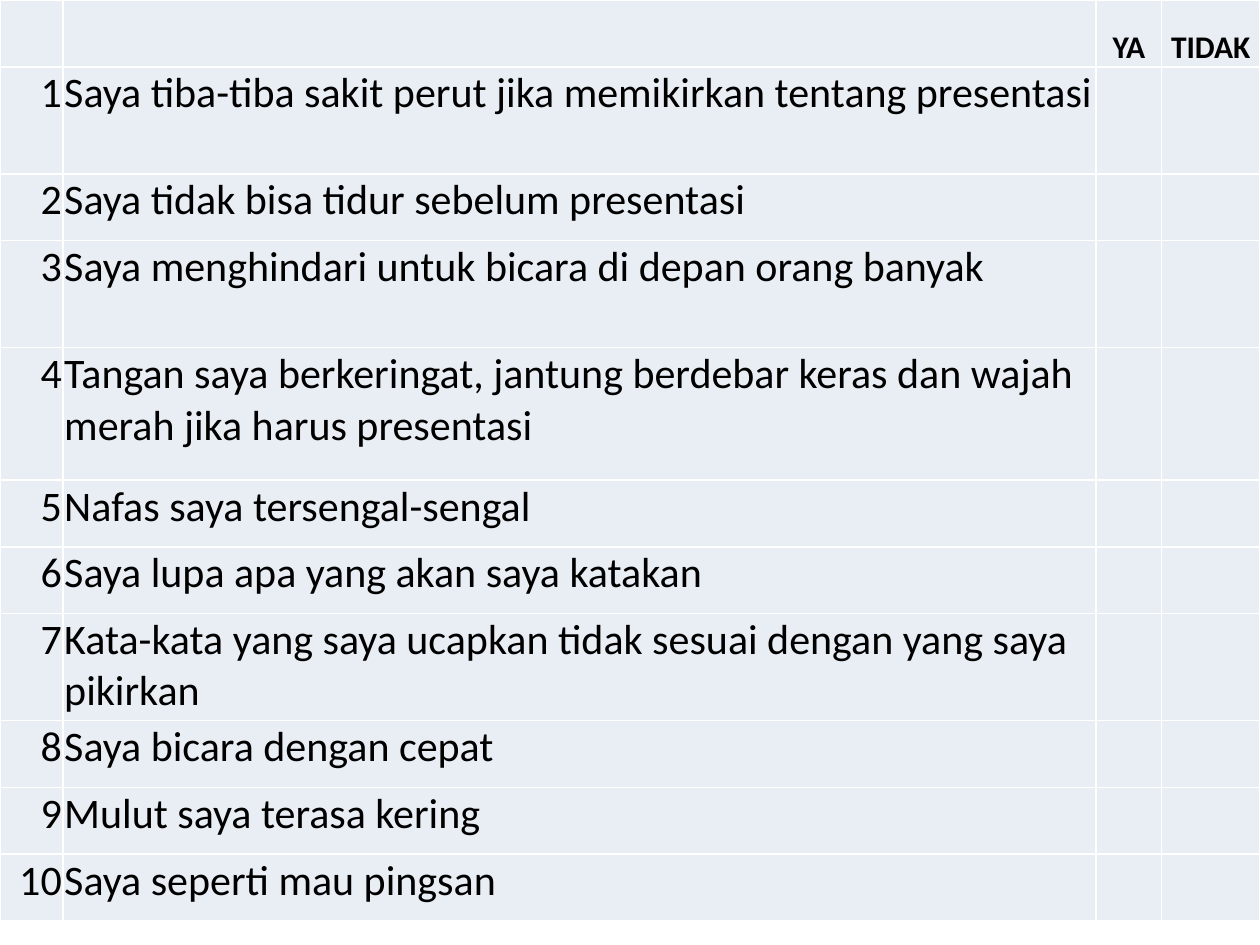
"""Build a slide with a yes/no checklist about presentation nerves."""
from pptx import Presentation
from pptx.dml.color import RGBColor
from pptx.enum.text import MSO_ANCHOR, PP_ALIGN
from pptx.oxml import parse_xml
from pptx.oxml.ns import nsdecls
from pptx.util import Inches, Pt

LEFT, MID, RIGHT = PP_ALIGN.LEFT, PP_ALIGN.CENTER, PP_ALIGN.RIGHT
TOP, BOTTOM = MSO_ANCHOR.TOP, MSO_ANCHOR.BOTTOM

HEADS = ["", "", "YA", "TIDAK"]
ITEMS = [
    ("Saya tiba-tiba sakit perut jika memikirkan tentang presentasi", "mid"),
    ("Saya tidak bisa tidur sebelum presentasi", "low"),
    ("Saya menghindari untuk bicara di depan orang banyak", "mid"),
    ("Tangan saya berkeringat, jantung berdebar keras dan wajah merah jika harus presentasi", "tall"),
    ("Nafas saya tersengal-sengal", "low"),
    ("Saya lupa apa yang akan saya katakan", "low"),
    ("Kata-kata yang saya ucapkan tidak sesuai dengan yang saya pikirkan", "mid"),
    ("Saya bicara dengan cepat", "low"),
    ("Mulut saya terasa kering", "low"),
    ("Saya seperti mau pingsan", "low"),
]
COLORS = {"cell": "E9EDF4", "line": "FFFFFF", "text": "000000"}
WIDTHS = [0.5, 8.2, 0.52, 0.78]
HEIGHTS = {"low": 0.53, "mid": 0.85, "tall": 1.05}
ALIGNS = [RIGHT, LEFT, MID, MID]
INSETS = {"margin_left": 0.01, "margin_right": 0.01, "margin_top": 0.01, "margin_bottom": 0}
HEAD = {"name": "Calibri", "size": Pt(18), "bold": True}
BODY = {"name": "Calibri", "size": Pt(24), "bold": False}


def color(key):
    return RGBColor.from_string(COLORS[key])


def border(cell):
    props = cell._tc.get_or_add_tcPr()
    for side in ("lnL", "lnR", "lnT", "lnB"):
        props.append(parse_xml(
            f'<a:{side} {nsdecls("a")} w="{Pt(1)}"><a:solidFill>'
            f'<a:srgbClr val="{COLORS["line"]}"/></a:solidFill></a:{side}>'))


def write(cell, text, align, anchor, style):
    cell.text = text
    cell.vertical_anchor = anchor
    for key, size in INSETS.items():
        setattr(cell, key, Inches(size))
    para = cell.text_frame.paragraphs[0]
    para.alignment = align
    font = para.runs[0].font
    for key, value in style.items():
        setattr(font, key, value)
    font.color.rgb = color("text")


def main():
    deck = Presentation()
    deck.slide_width, deck.slide_height = Inches(10), Inches(7.5)
    slide = deck.slides.add_slide(deck.slide_layouts[6])
    rows = [HEADS] + [[str(num), text, "", ""] for num, (text, _) in enumerate(ITEMS, 1)]
    tall = [HEIGHTS[kind] for kind in ["low"] + [kind for _, kind in ITEMS]]
    table = slide.shapes.add_table(
        len(rows), len(WIDTHS), 0, 0, Inches(sum(WIDTHS)), Inches(sum(tall))).table
    table.first_row = table.horz_banding = False
    for col, width in zip(table.columns, WIDTHS):
        col.width = Inches(width)
    for r, (texts, height) in enumerate(zip(rows, tall)):
        table.rows[r].height = Inches(height)
        anchor, style = (TOP, BODY) if r else (BOTTOM, HEAD)
        for c, (text, align) in enumerate(zip(texts, ALIGNS)):
            cell = table.cell(r, c)
            border(cell)
            cell.fill.solid()
            cell.fill.fore_color.rgb = color("cell")
            if text:
                write(cell, text, align, anchor, style)
    deck.save("out.pptx")


if __name__ == "__main__":
    main()
